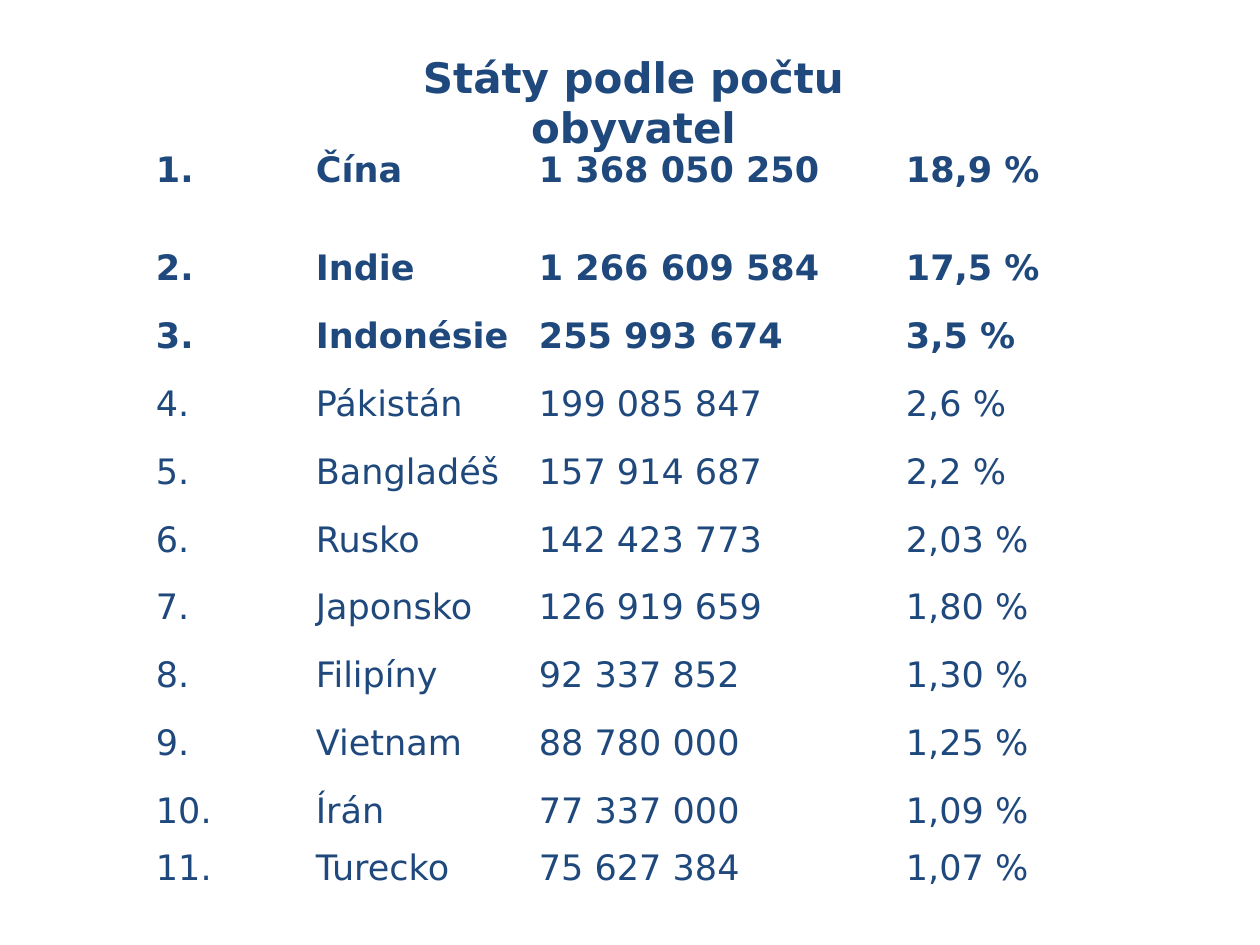
import dataclasses

import pptx
import pptx.dml.color
import pptx.enum.text
import pptx.util

PX = 914400 / 126
FONT = "DejaVu Sans"
NAVY = "1F497D"
COLUMNS = [160, 223, 367, 160, 142]
ROWS = [128] + [68] * 9 + [45] * 2


@dataclasses.dataclass
class Country:
    name: str
    population: str
    share: str


COUNTRIES = [
    Country("Čína", "1 368 050 250", "18,9 %"),
    Country("Indie", "1 266 609 584", "17,5 %"),
    Country("Indonésie", "255 993 674", "3,5 %"),
    Country("Pákistán", "199 085 847", "2,6 %"),
    Country("Bangladéš", "157 914 687", "2,2 %"),
    Country("Rusko", "142 423 773", "2,03 %"),
    Country("Japonsko", "126 919 659", "1,80 %"),
    Country("Filipíny", "92 337 852", "1,30 %"),
    Country("Vietnam", "88 780 000", "1,25 %"),
    Country("Írán", "77 337 000", "1,09 %"),
    Country("Turecko", "75 627 384", "1,07 %"),
]


def px(n: int) -> pptx.util.Emu:
    return pptx.util.Emu(round(n * PX))


def color(value: str) -> pptx.dml.color.RGBColor:
    return pptx.dml.color.RGBColor.from_string(value)


def write(tf, text: str, *, size: int = 20, bold: bool = False, align=None) -> None:
    p = tf.paragraphs[0]
    p.alignment = align
    r = p.add_run()
    r.text = text
    r.font.name = FONT
    r.font.size = pptx.util.Pt(size)
    r.font.bold = bold
    r.font.color.rgb = color(NAVY)


def add_ranking(s, left: int, top: int, countries: list[Country]) -> None:
    table = s.shapes.add_table(
        len(ROWS), len(COLUMNS), px(left), px(top), px(sum(COLUMNS)), px(sum(ROWS))
    ).table
    table.first_row = False
    table.horz_banding = False
    for column, width in zip(table.columns, COLUMNS):
        column.width = px(width)
    for row, height in zip(table.rows, ROWS):
        row.height = px(height)
    for cell in table.iter_cells():
        cell.fill.background()
        cell.vertical_anchor = pptx.enum.text.MSO_ANCHOR.MIDDLE
        cell.margin_left = cell.margin_right = px(2)
        cell.margin_top = cell.margin_bottom = px(1)
    for i, country in enumerate(countries):
        values = [f"{i + 1}.", country.name, country.population, country.share]
        for j, value in enumerate(values):
            write(table.cell(i, j).text_frame, value, bold=i < 3)


def add_title(s, left: int, top: int, width: int, height: int, text: str) -> None:
    tf = s.shapes.add_textbox(px(left), px(top), px(width), px(height)).text_frame
    tf.word_wrap = True
    tf.auto_size = pptx.enum.text.MSO_AUTO_SIZE.SHAPE_TO_FIT_TEXT
    tf.margin_left = tf.margin_right = px(20)
    write(tf, text, size=24, bold=True, align=pptx.enum.text.PP_ALIGN.CENTER)


def main() -> None:
    prs = pptx.Presentation()
    prs.slide_width = px(1260)
    prs.slide_height = px(945)
    s = prs.slides.add_slide(prs.slide_layouts[6])
    add_ranking(s, 154, 106, COUNTRIES)
    add_title(s, 302, 45, 663, 63, "Státy podle počtu obyvatel")
    prs.save("out.pptx")


if __name__ == "__main__":
    main()
